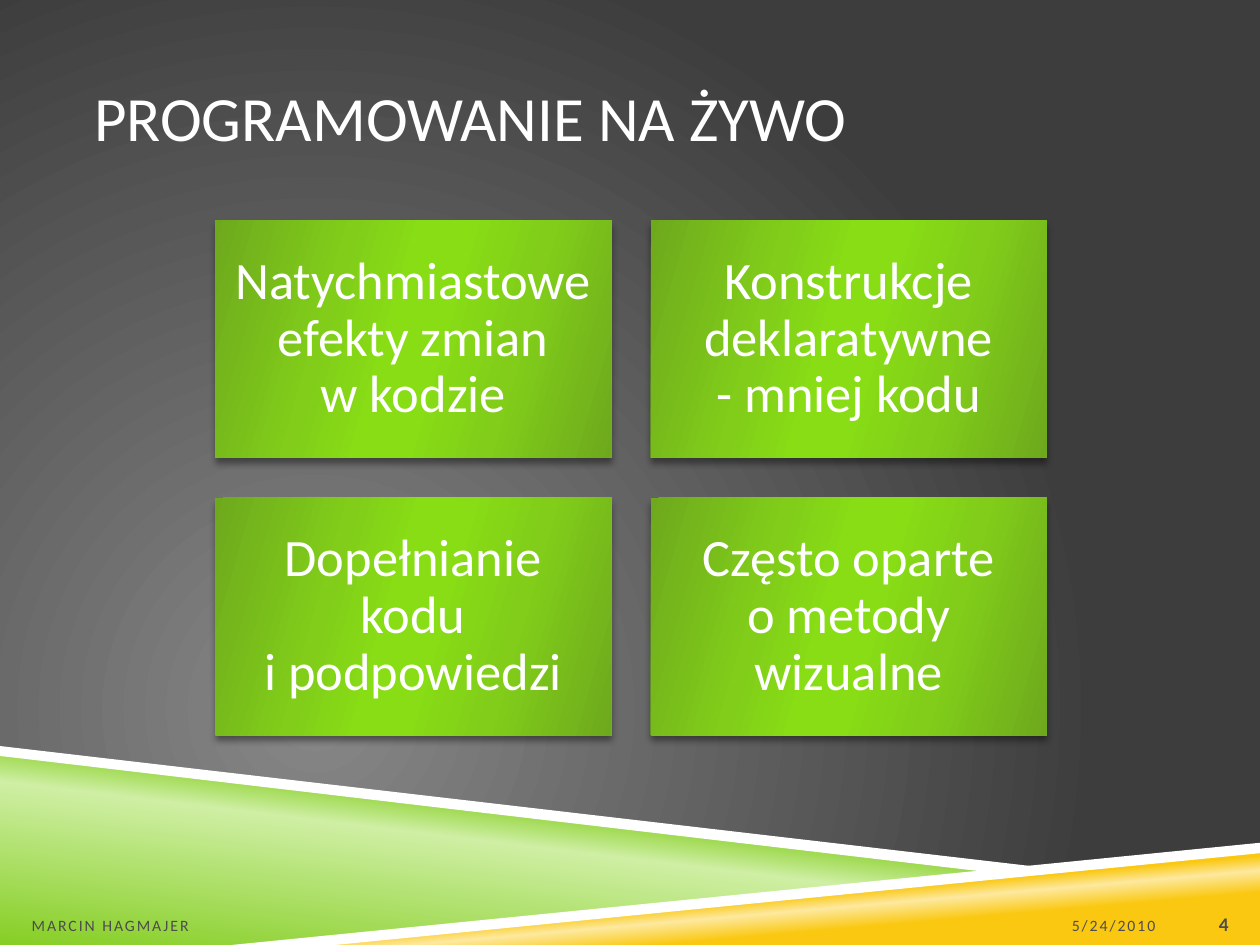
from dataclasses import dataclass

import pptx
import pptx.dml.color
import pptx.enum.shapes
import pptx.enum.text
import pptx.oxml
import pptx.oxml.ns
import pptx.util

Cm, Pt = pptx.util.Cm, pptx.util.Pt
RGB = pptx.dml.color.RGBColor.from_string
ALIGN, ANCHOR = pptx.enum.text.PP_ALIGN, pptx.enum.text.MSO_ANCHOR
DRAWING_NS = pptx.oxml.ns.nsdecls("a")


@dataclass(frozen=True)
class Theme:
    font: str = "Calibri"
    white: str = "FFFFFF"
    footer: str = "4D4D4D"
    title_size: int = 36
    card_size: int = 30
    footer_size: int = 9
    number_size: int = 11
    backdrop: tuple = ((0, "878787"), (100, "3D3D3D"))
    green_band: tuple = ((0, "86CE24"), (52, "CFEFA4"), (66, "86CE24"))
    yellow_band: tuple = ((28, "FAC810"), (40, "FDE99F"), (48, "FAC810"))
    card: tuple = ((0, "6EA91D"), (30, "81CD1A"), (45, "88DD15"),
                   (55, "88DD15"), (73, "81CD1A"), (100, "6EA91D"))


theme = Theme()


def paint_gradient(fill, properties, stops, angle=None):
    """Fill linearly at a clockwise angle, or as a circle when there is none."""
    fill.background()
    stop_xml = "".join(
        f'<a:gs pos="{position * 1000}"><a:srgbClr val="{color}"/></a:gs>'
        for position, color in stops)
    if angle is None:
        shade = ('<a:path path="circle"><a:fillToRect l="50000" t="100000" '
                 'r="100000" b="50000"/></a:path>')
    else:
        shade = f'<a:lin ang="{angle * 60000}" scaled="0"/>'
    gradient = pptx.oxml.parse_xml(
        f'<a:gradFill {DRAWING_NS} rotWithShape="1">'
        f'<a:gsLst>{stop_xml}</a:gsLst>{shade}</a:gradFill>')
    properties.replace(properties.find(pptx.oxml.ns.qn("a:noFill")), gradient)


def write(shape, text, size, color, align, anchor, insets):
    frame = shape.text_frame
    frame.word_wrap = True
    frame.vertical_anchor = anchor
    (frame.margin_left, frame.margin_top,
     frame.margin_right, frame.margin_bottom) = map(Cm, insets)
    frame.text = text
    paragraph = frame.paragraphs[0]
    paragraph.alignment = align
    for run in paragraph.runs:
        run.font.name = theme.font
        run.font.size = Pt(size)
        run.font.color.rgb = RGB(color)
    return paragraph


deck = pptx.Presentation()
deck.slide_width, deck.slide_height = Cm(25.4), Cm(19.05)
slide = deck.slides.add_slide(deck.slide_layouts[6])
shapes = slide.shapes

backdrop_fill = slide.background.fill
backdrop_fill.background()
backdrop = slide._element.find(".//" + pptx.oxml.ns.qn("p:bgPr"))
paint_gradient(backdrop_fill, backdrop, theme.backdrop)

# Bands along the bottom edge: outline in cm, colour or stops, angle
bands = [
    ([(0, 15.16), (20.12, 17.58), (5.08, 19.05), (0, 19.05)], theme.green_band, 277),
    ([(5.03, 19.05), (25.4, 17.07), (25.4, 19.05)], theme.yellow_band, 265),
    ([(0, 15.04), (0, 15.24), (20.07, 17.6), (21.13, 17.5)], theme.white, None),
    ([(25.4, 16.99), (4.67, 19.05), (6.76, 19.05), (25.4, 17.2)], theme.white, None),
]
for outline, paint, angle in bands:
    corners = [(Cm(x), Cm(y)) for x, y in outline]
    builder = shapes.build_freeform(*corners[0])
    builder.add_line_segments(corners[1:], close=True)
    band = builder.convert_to_shape()
    band.shadow.inherit = False
    band.line.fill.background()
    if angle is None:
        band.fill.solid()
        band.fill.fore_color.rgb = RGB(paint)
    else:
        paint_gradient(band.fill, band._element.spPr, paint, angle)

title = shapes.add_textbox(Cm(1.9), Cm(0.76), Cm(21.6), Cm(3.18))
write(title, "PROGRAMOWANIE NA ŻYWO", theme.title_size, theme.white,
      ALIGN.LEFT, ANCHOR.MIDDLE, (0, 0.13, 0, 0.13))

benefits = [
    "Natychmiastowe efekty zmian\vw kodzie",
    "Konstrukcje deklaratywne\v- mniej kodu",
    "Dopełnianie kodu\vi podpowiedzi",
    "Często oparte\vo metody wizualne",
]
card_width, card_height, gap = 7.98, 4.79, 0.8
for index, benefit in enumerate(benefits):
    row, column = divmod(index, 2)
    card = shapes.add_shape(
        pptx.enum.shapes.MSO_SHAPE.RECTANGLE,
        Cm(4.34 + column * (card_width + gap)),
        Cm(4.44 + row * (card_height + gap)),
        Cm(card_width), Cm(card_height))
    card.line.fill.background()
    paint_gradient(card.fill, card._element.spPr, theme.card, 16)
    card.shadow.inherit = False
    effects = card._element.spPr.find(pptx.oxml.ns.qn("a:effectLst"))
    effects.append(pptx.oxml.parse_xml(
        f'<a:outerShdw {DRAWING_NS} blurRad="{Pt(4)}" dist="{Pt(3.3)}" '
        'dir="5400000" rotWithShape="0"><a:srgbClr val="000000">'
        '<a:alpha val="40000"/></a:srgbClr></a:outerShdw>'))
    paragraph = write(card, benefit, theme.card_size, theme.white,
                      ALIGN.CENTER, ANCHOR.MIDDLE, (0.3, 0.3, 0.3, 0.3))
    paragraph.line_spacing = 0.9

# Footer: text, left, width, alignment, size, bold, letter spacing in 1/100 pt
footers = [
    ("5/24/2010", 17.78, 5.51, ALIGN.RIGHT, theme.footer_size, False, 110),
    ("MARCIN HAGMAJER", 0.64, 8.05, ALIGN.LEFT, theme.footer_size, False, 110),
    ("4", 23.5, 1.27, ALIGN.RIGHT, theme.number_size, True, 0),
]
for text, left, width, align, size, bold, tracking in footers:
    footer = shapes.add_textbox(Cm(left), Cm(17.83), Cm(width), Cm(1.02))
    paragraph = write(footer, text, size, theme.footer, align,
                      ANCHOR.BOTTOM, (0, 0.13, 0, 0))
    run = paragraph.runs[0]
    run.font.bold = bold
    run.font._element.set("spc", str(tracking))

deck.save("out.pptx")
